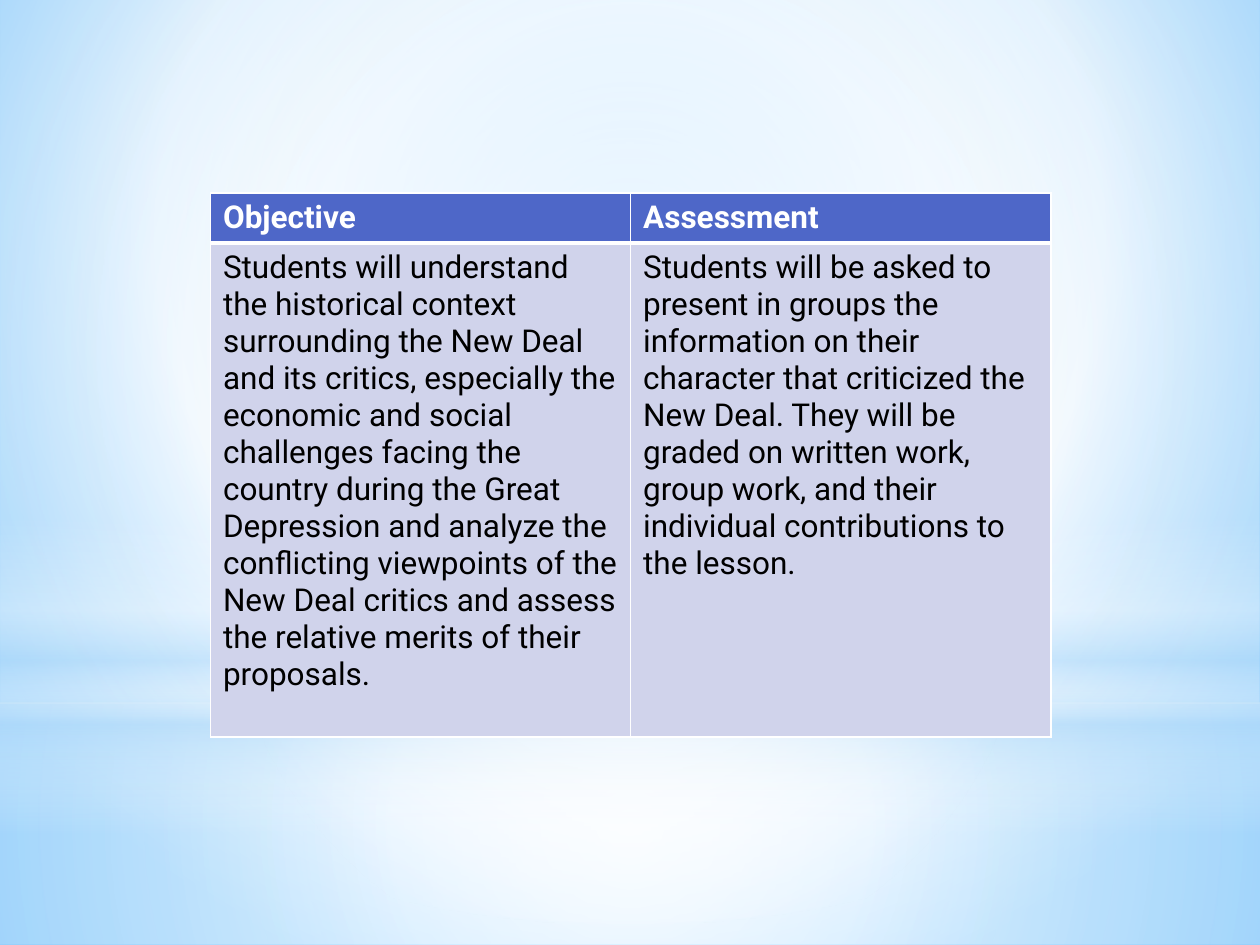
"""Build a slide with a table of objective and assessment."""
import pptx
import pptx.dml.color
import pptx.enum.shapes
import pptx.oxml
import pptx.oxml.ns
import pptx.util

Inches = pptx.util.Inches
Shape = pptx.enum.shapes.MSO_SHAPE

HUES = {
    "white": "FFFFFF", "black": "000000", "head": "4E67C8", "body": "D0D3EB",
    "sky": "9ED5FF", "deep": "5BB9FF", "pale": "B4DCFA",
}
MID = (50, 50, 50, 50)
GLOWS = [
    (Shape.RECTANGLE, (0, 5.58, 10, 1.92),
     [(0, "white", 91), (37, "white", 76), (100, "pale", 79)], MID),
    (Shape.RECTANGLE, (0, 0, 10, 5.58),
     [(0, "white", 89), (48, "white", 62), (100, "pale", 79)], MID),
    (Shape.RECTANGLE, (0, 4.12, 10, 2.5),
     [(0, "white", 0), (29, "white", 30), (45, "pale", 40),
      (55, "white", 26), (65, "pale", 60), (100, "white", 0)], None),
    (Shape.OVAL, (0, 1.75, 10, 5.58),
     [(0, "white", 100), (56, "white", 0)], MID),
]
ROWS = [
    ("Objective", "Assessment"),
    ("Students will understand the historical context surrounding the New Deal "
     "and its critics, especially the economic and social challenges facing the "
     "country during the Great Depression and analyze the conflicting viewpoints "
     "of the New Deal critics and assess the relative merits of their proposals.",
     "Students will be asked to present in groups the information on their "
     "character that criticized the New Deal. They will be graded on written "
     "work, group work, and their individual contributions to the lesson."),
]


def hue(name):
    """Return the named colour."""
    return pptx.dml.color.RGBColor.from_string(HUES[name])


class Deck:
    """Hold the style and the current slide."""

    def __init__(self, font, size):
        """Open a blank slide."""
        self.font, self.size = font, pptx.util.Pt(size)
        self.show = pptx.Presentation()
        self.show.slide_width, self.show.slide_height = Inches(10), Inches(7.5)
        self.slide = self.show.slides.add_slide(self.show.slide_layouts[6])

    def blend(self, item, stops, rect):
        """Swap a solid fill for a radial or downward gradient."""
        marks = "".join(
            f'<a:gs pos="{pos * 1000}"><a:srgbClr val="{HUES[name]}">'
            f'<a:alpha val="{part * 1000}"/></a:srgbClr></a:gs>'
            for pos, name, part in stops)
        if rect:
            sides = " ".join(f'{side}="{val * 1000}"' for side, val in zip("ltrb", rect))
            way = f'<a:path path="circle"><a:fillToRect {sides}/></a:path>'
        else:
            way = '<a:lin ang="5400000" scaled="0"/>'
        grad = pptx.oxml.parse_xml(
            f'<a:gradFill {pptx.oxml.ns.nsdecls("a")} rotWithShape="1">'
            f'<a:gsLst>{marks}</a:gsLst>{way}</a:gradFill>')
        old = item.element.xpath(".//a:solidFill")[0]
        old.getparent().replace(old, grad)

    def back(self, stops, rect):
        """Paint the background."""
        self.slide.background.fill.solid()
        self.slide.background.fill.fore_color.rgb = hue("white")
        self.blend(self.slide, stops, rect)

    def glow(self, kind, box, stops, rect):
        """Add a soft shape without outline."""
        shape = self.slide.shapes.add_shape(kind, *map(Inches, box))
        shape.shadow.inherit = False
        shape.line.fill.background()
        shape.fill.solid()
        shape.fill.fore_color.rgb = hue("white")
        self.blend(shape, stops, rect)

    def edge(self, cell, widths):
        """Draw the left, right, top and bottom borders of a cell."""
        props = cell._tc.get_or_add_tcPr()
        for spot, (side, width) in enumerate(zip("LRTB", widths)):
            props.insert(spot, pptx.oxml.parse_xml(
                f'<a:ln{side} {pptx.oxml.ns.nsdecls("a")} w="{pptx.util.Pt(width)}">'
                f'<a:solidFill><a:srgbClr val="{HUES["white"]}"/></a:solidFill>'
                f'</a:ln{side}>'))

    def cell(self, cell, text, fill, ink, bold, widths):
        """Fill, write and frame one cell."""
        cell.fill.solid()
        cell.fill.fore_color.rgb = hue(fill)
        run = cell.text_frame.paragraphs[0].add_run()
        run.text = text
        run.font.name, run.font.size, run.font.bold = self.font, self.size, bold
        run.font.color.rgb = hue(ink)
        self.edge(cell, widths)

    def table(self, box, rows, heights):
        """Add a table with a header row."""
        frame = self.slide.shapes.add_table(len(rows), len(rows[0]), *map(Inches, box))
        grid = frame.table
        for num, (texts, height) in enumerate(zip(rows, heights)):
            grid.rows[num].height = Inches(height)
            look = (("body", "black", False, (1, 1, 3, 1)) if num
                    else ("head", "white", True, (1, 1, 1, 3)))
            for col, text in enumerate(texts):
                self.cell(grid.cell(num, col), text, *look)


def main():
    """Build and save the slide."""
    deck = Deck("Roboto", 18)
    deck.back([(0, "sky", 100), (60, "white", 100), (100, "deep", 100)], (20, 10, 20, 60))
    for glow in GLOWS:
        deck.glow(*glow)
    deck.table((1.67, 1.53, 6.67, 4.32), ROWS, (0.4, 3.92))
    deck.show.save("out.pptx")


if __name__ == "__main__":
    main()
